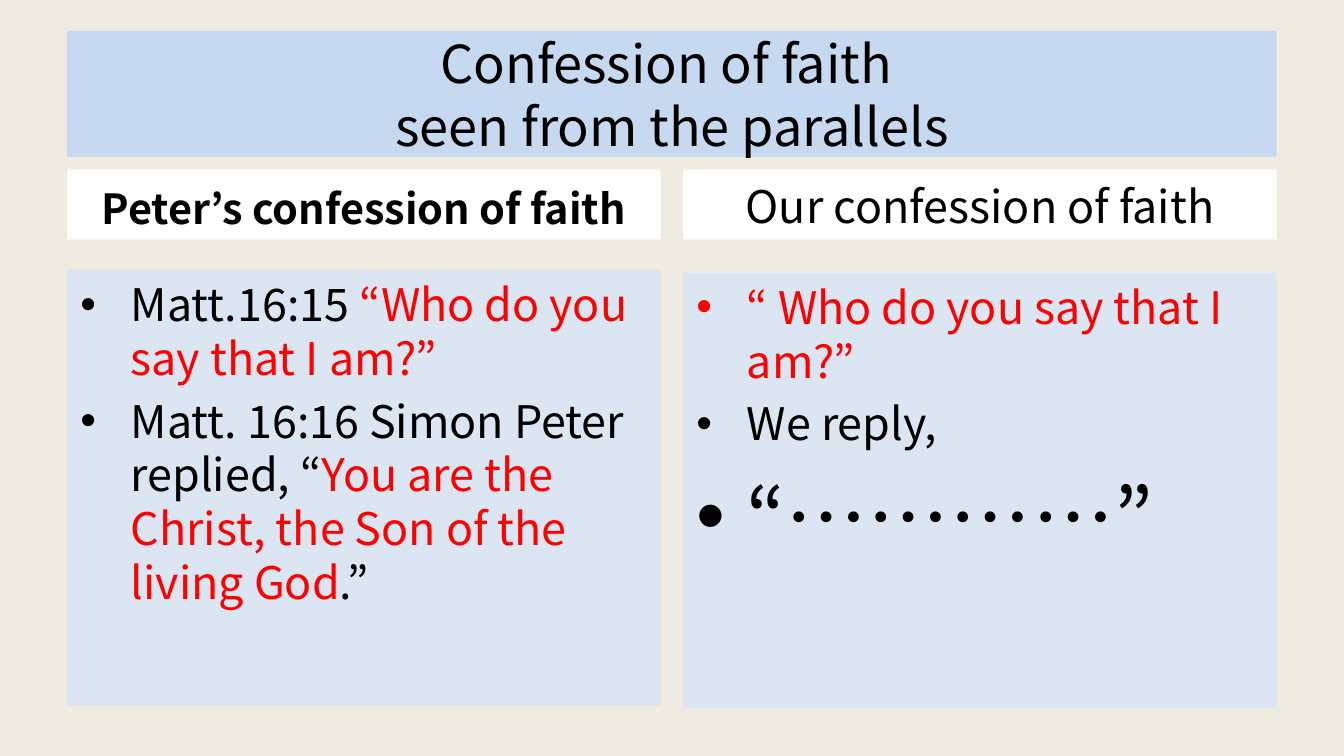
from lxml.etree import SubElement
from pptx import Presentation
from pptx.dml.color import RGBColor
from pptx.enum.shapes import MSO_SHAPE
from pptx.enum.text import MSO_ANCHOR, PP_ALIGN
from pptx.oxml.ns import qn
from pptx.util import Pt

PX = 9525  # EMU per px, 96 px to the inch
SLIDE_SIZE = (960, 540)
CREAM = RGBColor(0xEE, 0xEC, 0xE1)
BLUE = RGBColor(0xC6, 0xD9, 0xF1)
PALE_BLUE = RGBColor(0xDC, 0xE6, 0xF2)
WHITE = RGBColor(0xFF, 0xFF, 0xFF)
BLACK = RGBColor(0, 0, 0)
RED = RGBColor(0xFF, 0, 0)
KR_FONT = "Noto Sans CJK KR"
JP_FONT = "Noto Sans CJK JP"

MARGIN, GAP, COLUMN_WIDTH = 48, 16, 424
BULLET_INDENT = 36


def add_text(paragraph, text, size=24, color=BLACK, font=KR_FONT, bold=False):
    run = paragraph.add_run()
    run.text = text
    run.font.size = Pt(size)
    run.font.color.rgb = color
    run.font.name = font
    run.font.bold = bold
    SubElement(run.font._element, qn("a:ea"), typeface=font)


class SlideBuilder:
    def __init__(self, slide):
        self.slide = slide
        slide.background.fill.solid()
        slide.background.fill.fore_color.rgb = CREAM

    def panel(self, left, top, width, height, fill, anchor):
        """Add a plain filled rectangle and return its text frame."""
        shape = self.slide.shapes.add_shape(
            MSO_SHAPE.RECTANGLE, *(value * PX for value in (left, top, width, height)))
        shape.shadow.inherit = False
        shape.fill.solid()
        shape.fill.fore_color.rgb = fill
        shape.line.fill.background()
        frame = shape.text_frame
        frame.word_wrap = True
        frame.vertical_anchor = anchor
        return frame

    def heading(self, lines, left, top, width, height, fill, anchor, **text_format):
        frame = self.panel(left, top, width, height, fill, anchor)
        paragraph = frame.paragraphs[0]
        paragraph.alignment = PP_ALIGN.CENTER
        for index, line in enumerate(lines):
            if index:
                paragraph.add_line_break()
            add_text(paragraph, line, **text_format)

    def bullets(self, items, left, top, width, height):
        """Each item is a list of (text, format) runs."""
        frame = self.panel(left, top, width, height, PALE_BLUE, MSO_ANCHOR.TOP)
        for index, runs in enumerate(items):
            paragraph = frame.paragraphs[0] if index == 0 else frame.add_paragraph()
            paragraph.alignment = PP_ALIGN.LEFT
            if index:
                paragraph.space_before = Pt(0.2 * runs[0][1].get("size", 24))
            properties = paragraph._p.get_or_add_pPr()
            properties.set("marL", str(BULLET_INDENT * PX))
            properties.set("indent", str(-BULLET_INDENT * PX))
            SubElement(properties, qn("a:buFont"), typeface="Arial")
            SubElement(properties, qn("a:buChar"), char="•")
            for text, text_format in runs:
                add_text(paragraph, text, **text_format)


def main():
    presentation = Presentation()
    presentation.slide_width, presentation.slide_height = (side * PX for side in SLIDE_SIZE)
    builder = SlideBuilder(presentation.slides.add_slide(presentation.slide_layouts[6]))

    builder.heading(["Confession of faith ", "seen from the parallels"],
                    MARGIN, 22, 2 * COLUMN_WIDTH + GAP, 90, BLUE, MSO_ANCHOR.MIDDLE, size=28)

    red = {"color": RED}
    columns = [
        ("Peter’s confession of faith", {"size": 22.2, "font": JP_FONT, "bold": True}, 193, [
            [("Matt.16:15 ", {}), ("“Who do you say that I am?”", red)],
            [("Matt. 16:16 Simon Peter replied, “", {}),
             ("You are the Christ, the Son of the living God", red), (".”", {})],
        ]),
        ("Our confession of faith", {}, 195, [
            [("“ Who do you say that I am?”", red)],
            [("We reply,", {})],
            [("“…………”", {"size": 44})],
        ]),
    ]
    for index, (title, title_format, top, items) in enumerate(columns):
        left = MARGIN + index * (COLUMN_WIDTH + GAP)
        builder.heading([title], left, 121, COLUMN_WIDTH, 50, WHITE,
                        MSO_ANCHOR.BOTTOM, **title_format)
        builder.bullets(items, left, top, COLUMN_WIDTH, 311)

    presentation.save("out.pptx")


if __name__ == "__main__":
    main()
